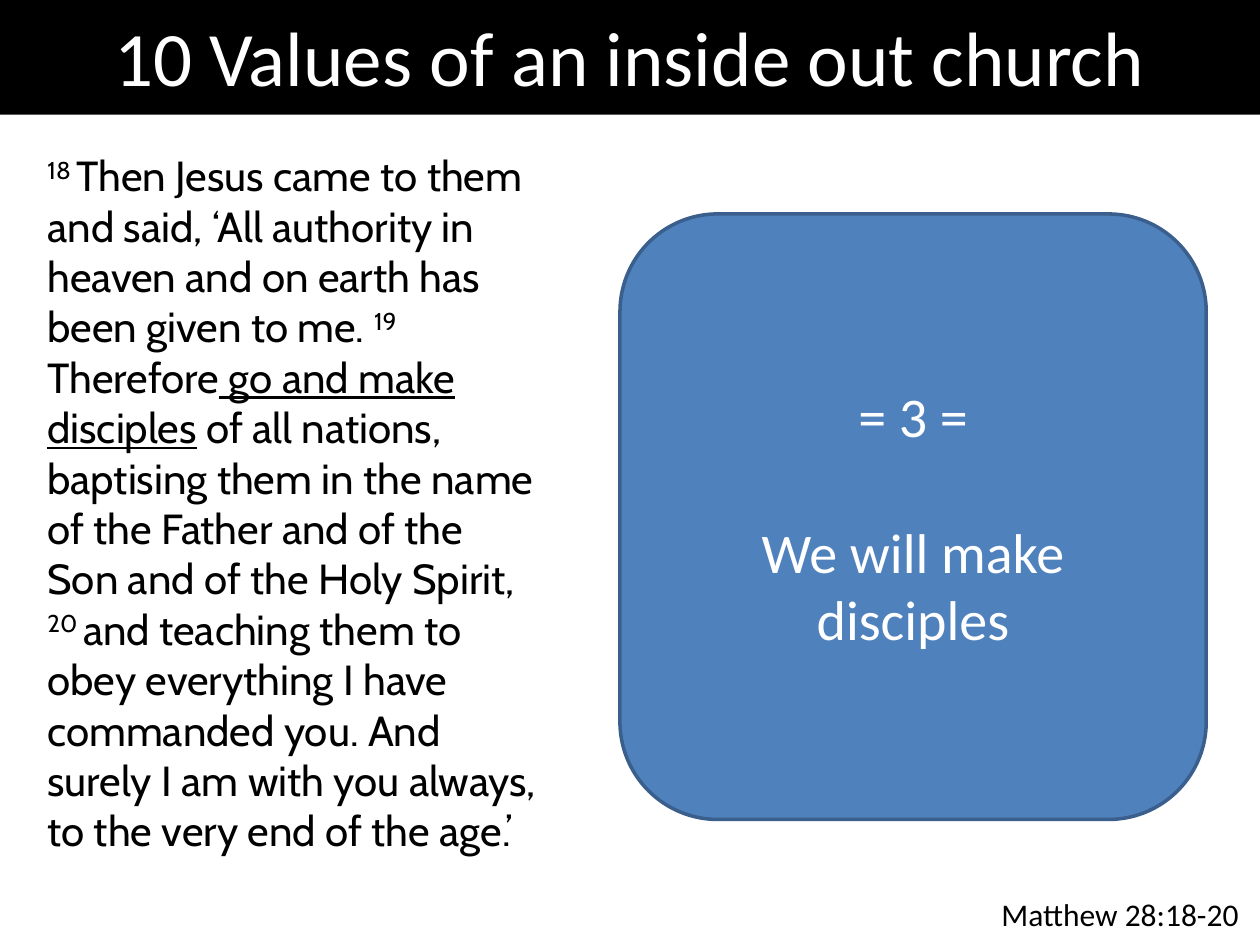
import pptx
import pptx.dml.color
import pptx.enum.shapes
import pptx.enum.text
import pptx.util

Pt = pptx.util.Pt
RGBColor = pptx.dml.color.RGBColor
Shapes = pptx.enum.shapes.MSO_SHAPE
Anchor = pptx.enum.text.MSO_ANCHOR
Align = pptx.enum.text.PP_ALIGN

BLACK = RGBColor(0x00, 0x00, 0x00)
WHITE = RGBColor(0xFF, 0xFF, 0xFF)
BLUE = RGBColor(0x4F, 0x81, 0xBD)
DARK_BLUE = RGBColor(0x3A, 0x5F, 0x8C)

TITLE = "10 Values of an inside out church"
VALUE_LINES = ["= 3 =", "We will make disciples"]
REFERENCE = "Matthew 28:18-20"
VERSE_RUNS = [
    ("18 ", "number"),
    ("Then Jesus came to them and said, ‘All authority in heaven and on earth "
     "has been given to me. ", "plain"),
    ("19 ", "number"),
    ("Therefore", "plain"),
    (" go and make disciples", "underlined"),
    (" of all nations, baptising them in the name of the Father and of the Son "
     "and of the Holy Spirit, ", "plain"),
    ("20 ", "number"),
    ("and teaching them to obey everything I have commanded you. And surely I am "
     "with you always, to the very end of the age.’", "plain"),
]


def set_font(paragraph, name, size, color):
    """Set the font of a whole paragraph."""
    paragraph.font.name = name
    paragraph.font.size = Pt(size)
    paragraph.font.color.rgb = color


def add_panel(slide, kind, box, fill, lines, size, gap=0):
    """Add a filled shape with centred white lines and return it."""
    shape = slide.shapes.add_shape(kind, *map(Pt, box))
    shape.shadow.inherit = False
    shape.fill.solid()
    shape.fill.fore_color.rgb = fill
    shape.line.fill.background()
    frame = shape.text_frame
    frame.word_wrap = True
    frame.vertical_anchor = Anchor.MIDDLE
    for index, line in enumerate(lines):
        paragraph = frame.add_paragraph() if index else frame.paragraphs[0]
        paragraph.text = line
        paragraph.alignment = Align.CENTER
        paragraph.space_before = Pt(gap if index else 0)
        set_font(paragraph, "Calibri", size, WHITE)
    return shape


def add_text(slide, box, runs, font_name, size, wrap):
    """Add a black text box made of styled runs."""
    shape = slide.shapes.add_textbox(*map(Pt, box))
    shape.text_frame.word_wrap = wrap
    paragraph = shape.text_frame.paragraphs[0]
    set_font(paragraph, font_name, size, BLACK)
    for text, style in runs:
        run = paragraph.add_run()
        run.text = text
        if style == "number":
            run.font._element.set("baseline", "30000")
        elif style == "underlined":
            run.font.underline = True


def main():
    """Build and save the slide."""
    presentation = pptx.Presentation()
    presentation.slide_width = Pt(720)
    presentation.slide_height = Pt(540)
    slide = presentation.slides.add_slide(presentation.slide_layouts[6])

    add_text(slide, (20, 82, 294.5, 415), VERSE_RUNS, "Cabin", 24, True)
    add_panel(slide, Shapes.RECTANGLE, (0, -2, 720, 67.5), BLACK, [TITLE], 44)
    add_text(slide, (565.2, 507.6, 152, 29), [(REFERENCE, "plain")], "Calibri", 18, False)
    value_panel = add_panel(slide, Shapes.ROUNDED_RECTANGLE, (354.3, 122.3, 335, 346),
                            BLUE, VALUE_LINES, 32, gap=39)
    value_panel.line.color.rgb = DARK_BLUE
    value_panel.line.width = Pt(2)

    presentation.save("out.pptx")


if __name__ == "__main__":
    main()
